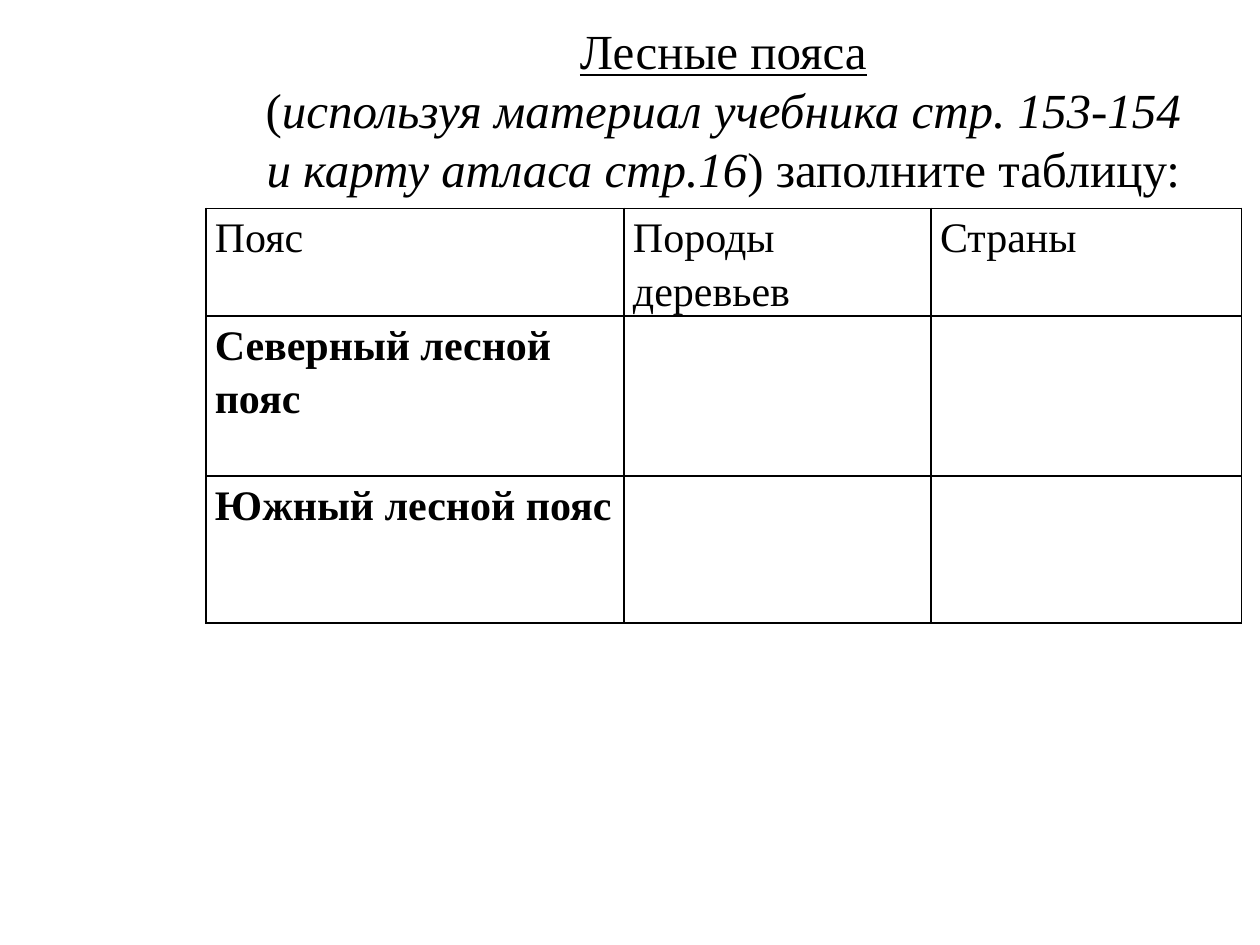
from lxml import etree
from pptx import Presentation
from pptx.dml.color import RGBColor
from pptx.enum import text
from pptx.oxml import ns
from pptx.util import Cm, Pt

BLACK, WHITE = "000000", "FFFFFF"


def colour(value):
    return RGBColor.from_string(value)


class Page:
    font = "Times New Roman"
    title_size, table_size = 28, 24
    cell_margin = Cm(0.18)

    def __init__(self, slide):
        self.slide = slide

    def add_run(self, paragraph, words, size, **emphasis):
        run = paragraph.add_run()
        run.text = words
        run.font.name = self.font
        run.font.size = Pt(size)
        run.font.color.rgb = colour(BLACK)
        for feature, value in emphasis.items():
            setattr(run.font, feature, value)

    def add_title(self, left, top, width, height, lines):
        frame = self.slide.shapes.add_textbox(
            Cm(left), Cm(top), Cm(width), Cm(height)).text_frame
        frame.word_wrap = True
        frame.vertical_anchor = text.MSO_ANCHOR.TOP
        frame.margin_top = Cm(0.16)
        for index, line in enumerate(lines):
            paragraph = frame.add_paragraph() if index else frame.paragraphs[0]
            paragraph.alignment = text.PP_ALIGN.CENTER
            paragraph.line_spacing = Pt(33.7)
            for words, emphasis in line:
                self.add_run(paragraph, words, self.title_size, **emphasis)

    def add_borders(self, cell):
        properties = cell._tc.get_or_add_tcPr()
        for side in ("a:lnL", "a:lnR", "a:lnT", "a:lnB"):
            line = etree.SubElement(properties, ns.qn(side), w=str(Pt(1)))
            fill = etree.SubElement(line, ns.qn("a:solidFill"))
            etree.SubElement(fill, ns.qn("a:srgbClr"), val=BLACK)

    def fill_cell(self, cell, words, bold):
        self.add_borders(cell)
        cell.fill.solid()
        cell.fill.fore_color.rgb = colour(WHITE)
        cell.margin_left = cell.margin_right = self.cell_margin
        cell.margin_top = cell.margin_bottom = 0
        if words:
            paragraph = cell.text_frame.paragraphs[0]
            paragraph.line_spacing = 1.15
            self.add_run(paragraph, words, self.table_size, bold=bold)

    def add_table(self, left, top, widths, heights, rows):
        table = self.slide.shapes.add_table(
            len(heights), len(widths), Cm(left), Cm(top),
            Cm(sum(widths)), Cm(sum(heights))).table
        table.first_row = table.horz_banding = False
        for column, width in zip(table.columns, widths):
            column.width = Cm(width)
        for index, (row, height, labels) in enumerate(zip(table.rows, heights, rows)):
            row.height = Cm(height)
            for cell, label in zip(row.cells, labels):
                self.fill_cell(cell, label, bold=index > 0)


def main():
    deck = Presentation()
    deck.slide_width, deck.slide_height = Cm(25.4), Cm(19.05)
    page = Page(deck.slides.add_slide(deck.slide_layouts[6]))
    page.add_table(4.15, 4.2, (8.43, 6.19, 6.26), (2.17, 3.23, 2.96), (
        ("Пояс", "Породы деревьев", "Страны"),
        ("Северный лесной пояс", "", ""),
        ("Южный лесной пояс", "", ""),
    ))
    italic = {"italic": True}
    page.add_title(4.32, 0.25, 20.52, 4.62, (
        [("Лесные пояса", {"underline": True})],
        [(" (", {}), ("используя материал учебника стр. 153-154 ", italic)],
        [("и карту атласа стр.16", italic), (") заполните таблицу:", {})],
    ))
    deck.save("out.pptx")


if __name__ == "__main__":
    main()
